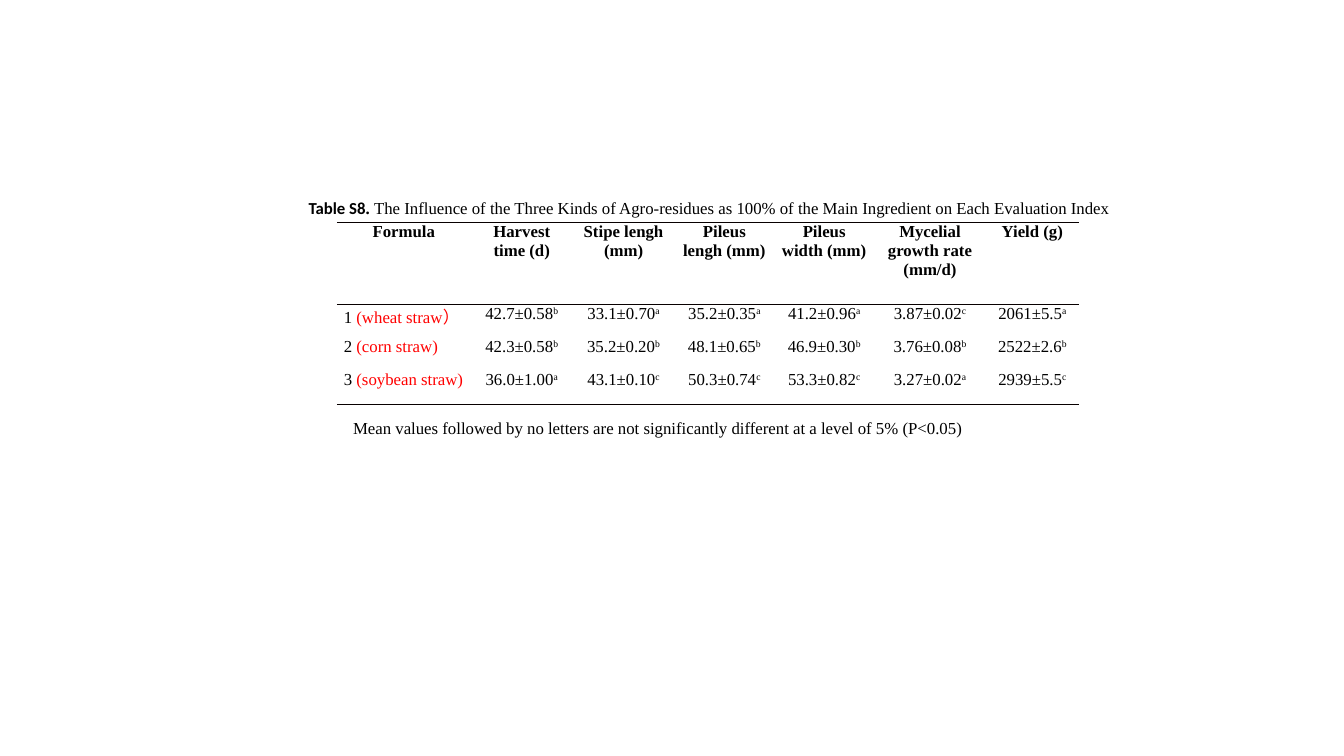
"""Build the slide with Table S8 on agro-residues and its evaluation index."""
from lxml import etree
from pptx import Presentation, util as u
from pptx.dml.color import RGBColor
from pptx.enum import text
from pptx.oxml import ns

CAPTION = [
    ("Table S8", {"bold": True, "face": "Calibri"}),
    (". ", {"bold": True}),
    ("The Influence of the Three Kinds of Agro-residues as 100% of the Main "
     "Ingredient on Each Evaluation Index", {}),
]
HEADINGS = ["Formula", "Harvest time (d)", "Stipe lengh (mm)", "Pileus lengh (mm)",
            "Pileus width (mm)", "Mycelial growth rate (mm/d)", "Yield (g)"]
FORMULAS = [
    ("1 ", "(wheat straw）", ["42.7±0.58 b", "33.1±0.70 a", "35.2±0.35 a",
                             "41.2±0.96 a", "3.87±0.02 c", "2061±5.5 a"]),
    ("2", " (corn straw)", ["42.3±0.58 b", "35.2±0.20 b", "48.1±0.65 b",
                            "46.9±0.30 b", "3.76±0.08 b", "2522±2.6 b"]),
    ("3 ", "(soybean straw)", ["36.0±1.00 a", "43.1±0.10 c", "50.3±0.74 c",
                               "53.3±0.82 c", "3.27±0.02 a", "2939±5.5 c"]),
]
FOOTNOTE = [
    (" ", {"size": 18}),
    ("Mean values followed by no letters are not significantly different "
     "at a level of 5% (P<0.05)", {}),
]

THEME = {"ink": "000000", "residue": "FF0000", "rule": "080000",
         "face": "Times New Roman", "size": 12, "rule_width": 1}
SLIDE = (13.33, 7.5)
CAPTION_BOX = (2.96, 1.91, 9.45, 0.3)
TABLE_LEFT, TABLE_TOP = 3.34, 2.21
FOOTNOTE_BOX = (TABLE_LEFT, 4.01, 8.98, 0.4)
COLUMNS = [1.33, 1.01, 1.01, 0.99, 0.99, 1.11, 0.92]
ROWS = [0.81] + [0.33] * len(FORMULAS)
CELL_INSET = 0.07


def write(frame, pieces, align=text.PP_ALIGN.LEFT):
    """Fill a text frame with (words, format) pieces."""
    paragraph = frame.paragraphs[0]
    paragraph.alignment = align
    paragraph.line_spacing = 1.0
    paragraph.space_before = u.Pt(0)
    for words, look in pieces:
        run = paragraph.add_run()
        run.text = words
        run.font.name = look.get("face", THEME["face"])
        run.font.size = u.Pt(look.get("size", THEME["size"]))
        run.font.bold = look.get("bold", False)
        run.font.color.rgb = RGBColor.from_string(THEME[look.get("color", "ink")])
        if look.get("raised"):
            run._r.get_or_add_rPr().set("baseline", "30000")


def rule_cell(cell, ruled_sides):
    """Draw the given sides of a cell and clear the others."""
    properties = cell._tc.get_or_add_tcPr()
    for side in "LRTB":
        line = etree.SubElement(properties, ns.qn(f"a:ln{side}"))
        if side in ruled_sides:
            line.set("w", str(u.Pt(THEME["rule_width"])))
            fill = etree.SubElement(line, ns.qn("a:solidFill"))
            etree.SubElement(fill, ns.qn("a:srgbClr"), val=THEME["rule"])
        else:
            etree.SubElement(line, ns.qn("a:noFill"))
    cell.fill.background()


def place_caption(slide):
    title = slide.shapes.title
    title.left, title.top, title.width, title.height = map(u.Inches, CAPTION_BOX)
    frame = title.text_frame
    frame.word_wrap = True
    frame.auto_size = text.MSO_AUTO_SIZE.SHAPE_TO_FIT_TEXT
    frame.vertical_anchor = text.MSO_ANCHOR.TOP
    write(frame, CAPTION, align=text.PP_ALIGN.JUSTIFY)


def place_footnote(slide):
    frame = slide.shapes.add_textbox(*map(u.Inches, FOOTNOTE_BOX)).text_frame
    frame.word_wrap = True
    frame.auto_size = text.MSO_AUTO_SIZE.SHAPE_TO_FIT_TEXT
    write(frame, FOOTNOTE)


def place_table(slide):
    grid = [[[(heading, {"bold": True})] for heading in HEADINGS]]
    for number, residue, results in FORMULAS:
        measured = [result.split() for result in results]
        grid.append([[(number, {}), (residue, {"color": "residue"})]] + [
            [(value, {}), (letter, {"raised": True})] for value, letter in measured])

    extent = (TABLE_LEFT, TABLE_TOP, sum(COLUMNS), sum(ROWS))
    table = slide.shapes.add_table(len(ROWS), len(COLUMNS), *map(u.Inches, extent)).table
    table.first_row = table.horz_banding = False
    for column, width in zip(table.columns, COLUMNS):
        column.width = u.Inches(width)
    ruled = {0: "TB", 1: "T", len(ROWS) - 1: "B"}
    for r, entries in enumerate(grid):
        table.rows[r].height = u.Inches(ROWS[r])
        for c, pieces in enumerate(entries):
            cell = table.cell(r, c)
            cell.margin_left = cell.margin_right = u.Inches(CELL_INSET)
            cell.margin_top = cell.margin_bottom = 0
            is_formula = r > 0 and c == 0
            write(cell.text_frame, pieces,
                  align=text.PP_ALIGN.LEFT if is_formula else text.PP_ALIGN.CENTER)
            rule_cell(cell, ruled.get(r, ""))


def main():
    deck = Presentation()
    deck.slide_width, deck.slide_height = map(u.Inches, SLIDE)
    slide = deck.slides.add_slide(deck.slide_layouts[5])
    place_caption(slide)
    place_footnote(slide)
    place_table(slide)
    deck.save("out.pptx")


if __name__ == "__main__":
    main()
